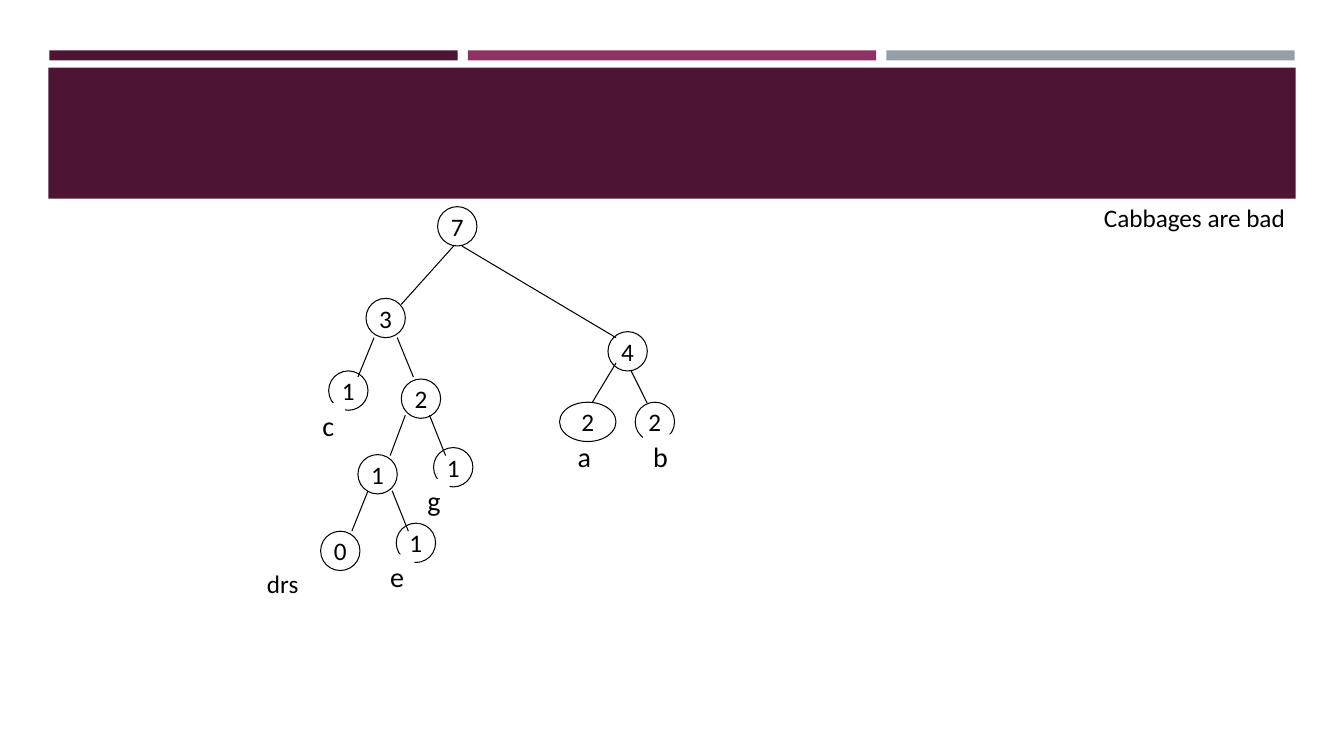
from lxml.etree import SubElement
from pptx import Presentation
from pptx.dml.color import RGBColor
from pptx.enum.shapes import MSO_CONNECTOR as Connector, MSO_SHAPE as Shape
from pptx.enum.text import MSO_ANCHOR as Anchor, MSO_AUTO_SIZE as AutoSize, PP_ALIGN as Align
from pptx.oxml.ns import qn
from pptx.util import Inches, Pt

COLORS = {"plum": "4D1434", "berry": "903163", "slate": "969FA7", "white": "FFFFFF", "ink": "000000"}
COLUMNS, ROWS = 133.3, 75
NODE_SIZE = 3.9
LABEL_HEIGHT = 4.4

BARS = ["plum", "berry", "slate"]
NODES = [
    ("7", 43.4, 20.5), ("3", 36.3, 29.6), ("4", 60.3, 32.9),
    ("1", 32.6, 36.8), ("2", 39.8, 37.6), ("2", 63, 39.9),
    ("1", 35.5, 45.1), ("1", 43, 44.4), ("0", 31.8, 52.7), ("1", 39.3, 51.9),
]
EDGES = [
    (45, 24.4, 39.8, 30.2), (45.8, 24.4, 61.1, 33.5),
    (61.1, 36, 58.7, 40), (62.6, 36.8, 64.2, 40),
    (37.1, 33.5, 35.5, 37.4), (39.4, 33.5, 41, 37.4),
    (40.2, 41.2, 38.7, 45.2), (42.6, 41.2, 44.2, 45.2),
    (36.5, 48.7, 34.9, 52.7), (38.9, 48.7, 40.5, 52.7),
]
LABELS = [("c", 31, 40, 3.2), ("a", 56.3, 43.1, 4.5), ("b", 63.8, 43.1, 3.4),
          ("g", 41.4, 47.5, 3.2), ("e", 37.7, 55, 3.4)]


class TreeSlide:
    """Draws bars, nodes, edges and labels on one slide, measured in grid cells."""

    def __init__(self, deck):
        self.font, self.line_width = "Calibri", Pt(0.75)
        self.cell_width = deck.slide_width / COLUMNS
        self.cell_height = deck.slide_height / ROWS
        self.page = deck.slides.add_slide(deck.slide_layouts[6])

    def place(self, column, row):
        return round(column * self.cell_width), round(row * self.cell_height)

    def color(self, name):
        return RGBColor.from_string(COLORS[name])

    def shape(self, kind, column, row, width, height, fill):
        box = self.page.shapes.add_shape(kind, *self.place(column, row), *self.place(width, height))
        box.shadow.inherit = False
        box.fill.solid()
        box.fill.fore_color.rgb = self.color(fill)
        box.line.fill.background()
        return box

    def set_text(self, box, text, size, align, anchor, wrap=False):
        frame = box.text_frame
        frame.word_wrap = wrap
        frame.vertical_anchor = anchor
        para = frame.paragraphs[0]
        para.text = text
        para.alignment = align
        para.font.name, para.font.size = self.font, Pt(size)
        para.font.color.rgb = self.color("ink")

    def bar(self, column, row, width, height, fill):
        self.shape(Shape.RECTANGLE, column, row, width, height, fill)

    def node(self, text, column, row, width=NODE_SIZE):
        box = self.shape(Shape.OVAL, column, row, width, NODE_SIZE, "white")
        box.line.color.rgb = self.color("ink")
        box.line.width = self.line_width
        self.set_text(box, text, 18, Align.CENTER, Anchor.MIDDLE)

    def edge(self, column, row, end_column, end_row):
        line = self.page.shapes.add_connector(
            Connector.STRAIGHT, *self.place(column, row), *self.place(end_column, end_row))
        line.line.color.rgb = self.color("ink")
        line.line.width = self.line_width
        SubElement(line.element.spPr, qn("a:effectLst"))

    def label(self, text, column, row, width, height=LABEL_HEIGHT, size=20):
        box = self.shape(Shape.RECTANGLE, column, row, width, height, "white")
        self.set_text(box, text, size, Align.LEFT, Anchor.TOP)
        box.text_frame.auto_size = AutoSize.SHAPE_TO_FIT_TEXT

    def note(self, text, column, row, width, height):
        box = self.page.shapes.add_textbox(*self.place(column, row), *self.place(width, height))
        self.set_text(box, text, 18, Align.LEFT, Anchor.TOP, wrap=True)


def main():
    deck = Presentation()
    deck.slide_width, deck.slide_height = Inches(13.33), Inches(7.5)
    slide = TreeSlide(deck)
    for index, fill in enumerate(BARS):
        slide.bar(4.9 + 41.5 * index, 5, 40.5, 1, fill)
    slide.bar(4.8, 6.7, 123.7, 13, "plum")
    for node in NODES:
        slide.node(*node)
    for edge in EDGES:
        slide.edge(*edge)
    for label in LABELS:
        slide.label(*label)
    slide.label("drs", 25.5, 55.9, 5.3, 4, 18)
    slide.node("2", 55.5, 39.9, 5.6)
    slide.note("Cabbages are bad", 108.5, 19.6, 23, 4)
    deck.save("out.pptx")


if __name__ == "__main__":
    main()
